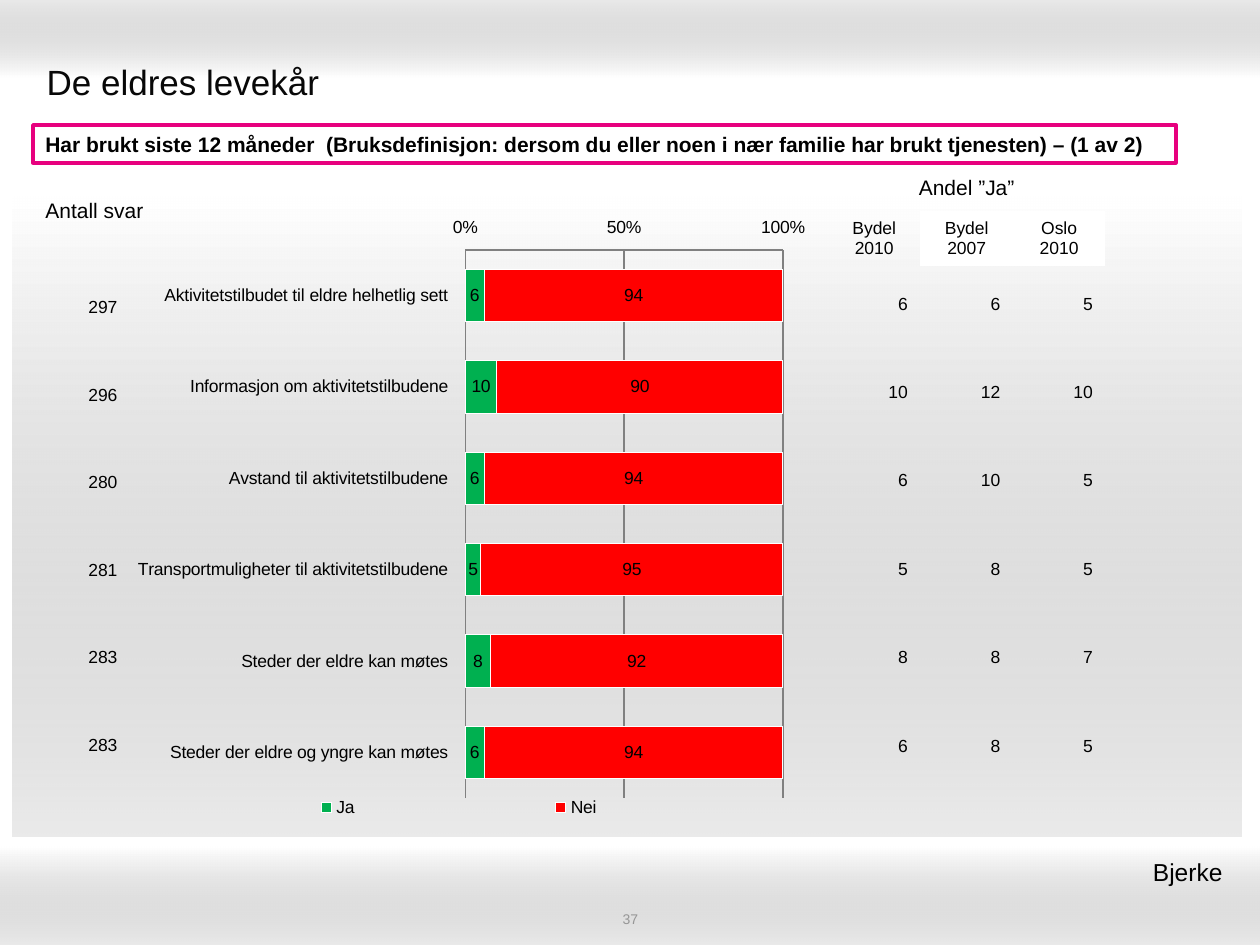
from dataclasses import dataclass

from lxml import etree
from pptx import Presentation
from pptx import util as u
from pptx.chart.data import CategoryChartData
from pptx.dml.color import RGBColor
from pptx.enum import chart as charts, shapes, text
from pptx.oxml import ns


@dataclass
class Theme:
    font: str = "Arial"
    black: str = "000000"
    white: str = "FFFFFF"
    title_color: str = "080808"
    band: str = "999999"
    number_color: str = "969696"
    accent: str = "E7007E"
    grid: str = "808080"
    yes: str = "00B050"
    no: str = "FF0000"
    title: int = 20
    district: int = 14
    heading: int = 12
    body: int = 10
    number: int = 8


theme = Theme()
EMU_PER_PX = 914400 / 126
NO_GRID_STYLE = "{2D5ABB26-0587-4C30-8999-92F81FD0307C}"
LEFT, CENTER, RIGHT = text.PP_ALIGN.LEFT, text.PP_ALIGN.CENTER, text.PP_ALIGN.RIGHT

TITLE = "De eldres levekår"
QUESTION = ("Har brukt siste 12 måneder  (Bruksdefinisjon: dersom du eller noen "
            "i nær familie har brukt tjenesten) – (1 av 2)")
DISTRICT = "Bjerke"
PAGE = "37"
RESPONSES_HEADING = "Antall svar"
SHARE_HEADING = "Andel ”Ja”"
SHARE_COLUMNS = ["Bydel\n2010", "Bydel\n2007", "Oslo\n2010"]
SERVICES = [
    ("Aktivitetstilbudet til eldre helhetlig sett ", 297, (6, 94), (6, 6, 5)),
    ("Informasjon om aktivitetstilbudene ", 296, (10, 90), (10, 12, 10)),
    ("Avstand til aktivitetstilbudene ", 280, (6, 94), (6, 10, 5)),
    ("Transportmuligheter til aktivitetstilbudene ", 281, (5, 95), (5, 8, 5)),
    ("Steder der eldre kan møtes ", 283, (8, 92), (8, 8, 7)),
    ("Steder der eldre og yngre kan møtes ", 283, (6, 94), (6, 8, 5)),
]
SERIES = [("Ja", theme.yes), ("Nei", theme.no)]
BANDS = [((0, 0, 1260, 78), 90), ((0, 847, 1260, 98), 270), ((13, 197, 1228, 640), 270)]
CHART_BOX = (123, 205, 694, 644)
PLOT_BOX = (465, 250, 318, 548)
LEGEND_BOX = (126, 795, 666, 26)


def px(value):
    return u.Emu(round(value * EMU_PER_PX))


def rgb(color):
    return RGBColor.from_string(color)


def style_font(font, size, color=theme.black, bold=False):
    font.name, font.size, font.bold = theme.font, u.Pt(size), bold
    font.color.rgb = rgb(color)


def write(frame, content, size, align=LEFT, color=theme.black, bold=False):
    frame.text = content
    for paragraph in frame.paragraphs:
        paragraph.alignment = align
        for run in paragraph.runs:
            style_font(run.font, size, color, bold)


def add_text(slide, box, content, size, align, color=theme.black):
    shape = slide.shapes.add_textbox(*map(px, box))
    shape.text_frame.word_wrap = True
    write(shape.text_frame, content, size, align, color)
    return shape


def add_band(slide, box, angle):
    shape = slide.shapes.add_shape(shapes.MSO_SHAPE.RECTANGLE, *map(px, box))
    shape.shadow.inherit = False
    shape.line.fill.background()
    shape.fill.gradient()
    shape.fill.gradient_angle = angle
    stops = shape.fill.gradient_stops
    for stop, position, color in zip(stops, (0, 1), (theme.white, theme.band)):
        stop.position, stop.color.rgb = position, rgb(color)
    last_color = shape._element.findall(".//" + ns.qn("a:srgbClr"))[-1]
    etree.SubElement(last_color, ns.qn("a:alpha"), val="20000")


def add_table(slide, origin, column_width, heights, rows, align, sizes):
    columns = len(rows[0])
    frame = slide.shapes.add_table(len(rows), columns, *map(px, origin),
                                   px(column_width * columns), px(sum(heights)))
    table = frame.table
    table.first_row = table.horz_banding = False
    table._tbl.tblPr.find(ns.qn("a:tableStyleId")).text = NO_GRID_STYLE
    for column in table.columns:
        column.width = px(column_width)
    for row, height, values, size in zip(table.rows, heights, rows, sizes):
        row.height = px(height)
        for cell, value in zip(row.cells, values):
            cell.fill.background()
            cell.vertical_anchor = text.MSO_ANCHOR.MIDDLE
            write(cell.text_frame, str(value), size, align)
    return table


def set_layout(parent, box, inner=False):
    old = parent.find(ns.qn("c:layout"))
    if old is not None:
        parent.remove(old)
    layout = etree.Element(ns.qn("c:layout"))
    manual = etree.SubElement(layout, ns.qn("c:manualLayout"))
    left, top, width, height = CHART_BOX
    fractions = ((box[0] - left) / width, (box[1] - top) / height,
                 box[2] / width, box[3] / height)
    settings = [("layoutTarget", "inner")] if inner else []
    settings += [("xMode", "edge"), ("yMode", "edge")]
    settings += [(name, f"{value:.3f}") for name, value in zip("xywh", fractions)]
    for name, value in settings:
        etree.SubElement(manual, ns.qn("c:" + name), val=value)
    parent.insert(0 if inner else 1, layout)


def add_usage_chart(slide):
    data = CategoryChartData()
    data.categories = [service[0] for service in SERVICES]
    for index, (name, _) in enumerate(SERIES):
        data.add_series(name, [service[2][index] for service in SERVICES])
    chart = slide.shapes.add_chart(charts.XL_CHART_TYPE.BAR_STACKED,
                                   *map(px, CHART_BOX), data).chart
    style_font(chart.font, theme.body)
    chart.has_title = False
    chart.has_legend = True
    chart.legend.position = charts.XL_LEGEND_POSITION.BOTTOM
    chart.legend.include_in_layout = False
    plot = chart.plots[0]
    plot.gap_width, plot.overlap, plot.vary_by_categories = 75, 100, False
    for series, (_, color) in zip(plot.series, SERIES):
        series.format.fill.solid()
        series.format.fill.fore_color.rgb = rgb(color)
        series.format.line.color.rgb = rgb(theme.white)
        labels = series.data_labels
        labels.show_value = True
        labels.number_format, labels.number_format_is_linked = "0", False
        style_font(labels.font, theme.body)
    category, value = chart.category_axis, chart.value_axis
    category.reverse_order = True
    category.major_tick_mark = charts.XL_TICK_MARK.NONE
    value.major_tick_mark = charts.XL_TICK_MARK.INSIDE
    value.minimum_scale, value.maximum_scale, value.major_unit = 0, 100, 50
    value.tick_labels.number_format = "General\\%"
    value.tick_labels.number_format_is_linked = False
    value.has_major_gridlines = True
    for axis in (category, value):
        axis.tick_label_position = charts.XL_TICK_LABEL_POSITION.LOW
        axis.format.line.color.rgb = rgb(theme.grid)
    value.major_gridlines.format.line.color.rgb = rgb(theme.grid)
    set_layout(chart._chartSpace.chart.plotArea, PLOT_BOX, inner=True)
    set_layout(chart.legend._element, LEGEND_BOX)


def main():
    presentation = Presentation()
    presentation.slide_width, presentation.slide_height = px(1260), px(945)
    slide = presentation.slides.add_slide(presentation.slide_layouts[5])
    for box, angle in BANDS:
        add_band(slide, box, angle)

    title = slide.shapes.title
    title.left, title.top, title.width, title.height = map(px, (34, 47, 1191, 69))
    write(title.text_frame, TITLE, theme.title, color=theme.title_color)
    title.text_frame.vertical_anchor = text.MSO_ANCHOR.MIDDLE
    slide.shapes._spTree.append(title._element)

    number = add_text(slide, (431, 910, 399, 18), PAGE, theme.number, CENTER, theme.number_color)
    frame = number.text_frame
    frame.margin_top = frame.margin_bottom = 0
    frame.vertical_anchor = text.MSO_ANCHOR.MIDDLE

    question = add_text(slide, (33, 125, 1143, 38), QUESTION, theme.heading, LEFT)
    question.text_frame.paragraphs[0].runs[0].font.bold = True
    question.fill.solid()
    question.fill.fore_color.rgb = rgb(theme.white)
    question.line.color.rgb = rgb(theme.accent)
    question.line.width = u.Pt(2)

    add_usage_chart(slide)
    count = len(SERVICES)
    body_sizes = [theme.body] * count
    add_table(slide, (828, 260), 92.5, [88.4] * count,
              [service[3] for service in SERVICES], RIGHT, body_sizes)
    header = add_table(slide, (828, 165), 92.5, [46, 55], [[SHARE_HEADING, "", ""], SHARE_COLUMNS],
                       CENTER, [theme.heading, theme.body])
    header.cell(0, 0).merge(header.cell(0, 2))
    for column in (1, 2):
        fill = header.cell(1, column).fill
        fill.solid()
        fill.fore_color.rgb = rgb(theme.white)
    add_table(slide, (64, 264), 66, [87.5] * count,
              [[service[1]] for service in SERVICES], RIGHT, body_sizes)
    add_table(slide, (5, 174), 179, [75], [[RESPONSES_HEADING]], CENTER, [theme.heading])
    add_text(slide, (769, 851, 466, 43), DISTRICT, theme.district, RIGHT)
    presentation.save("out.pptx")


if __name__ == "__main__":
    main()
